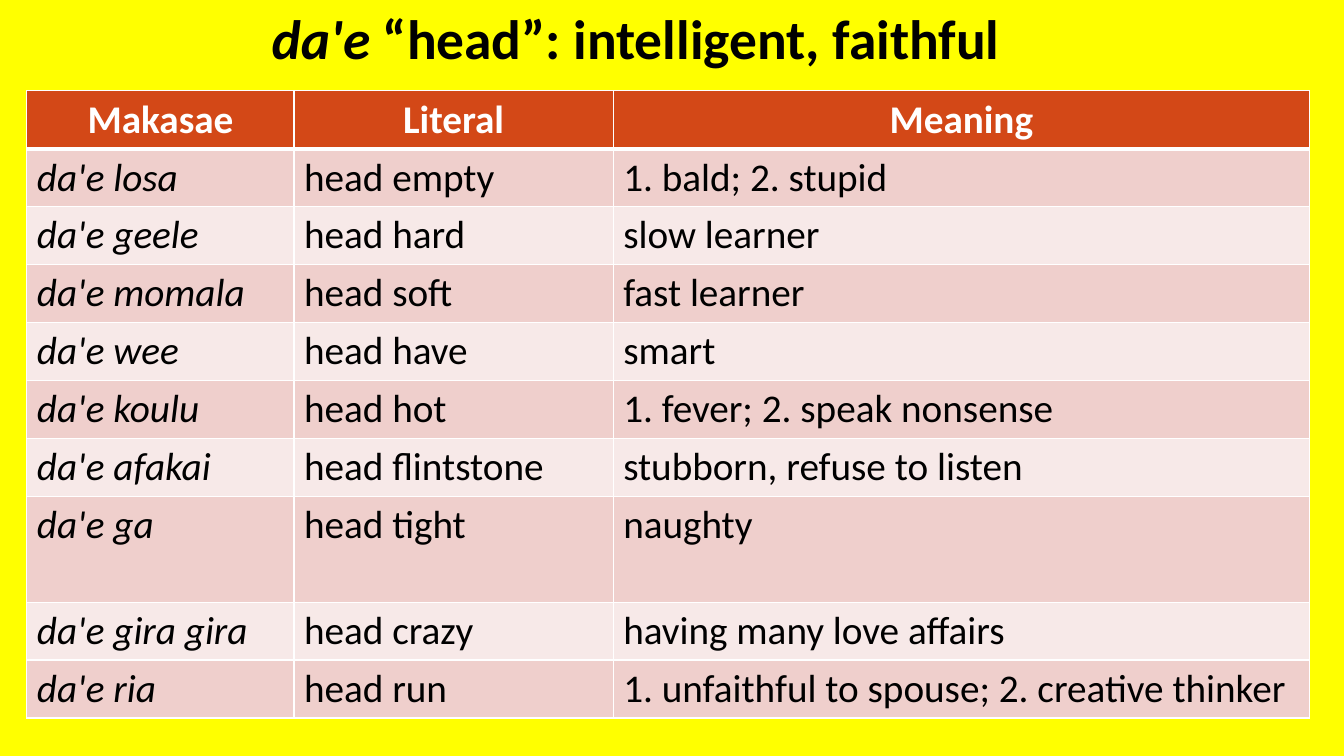
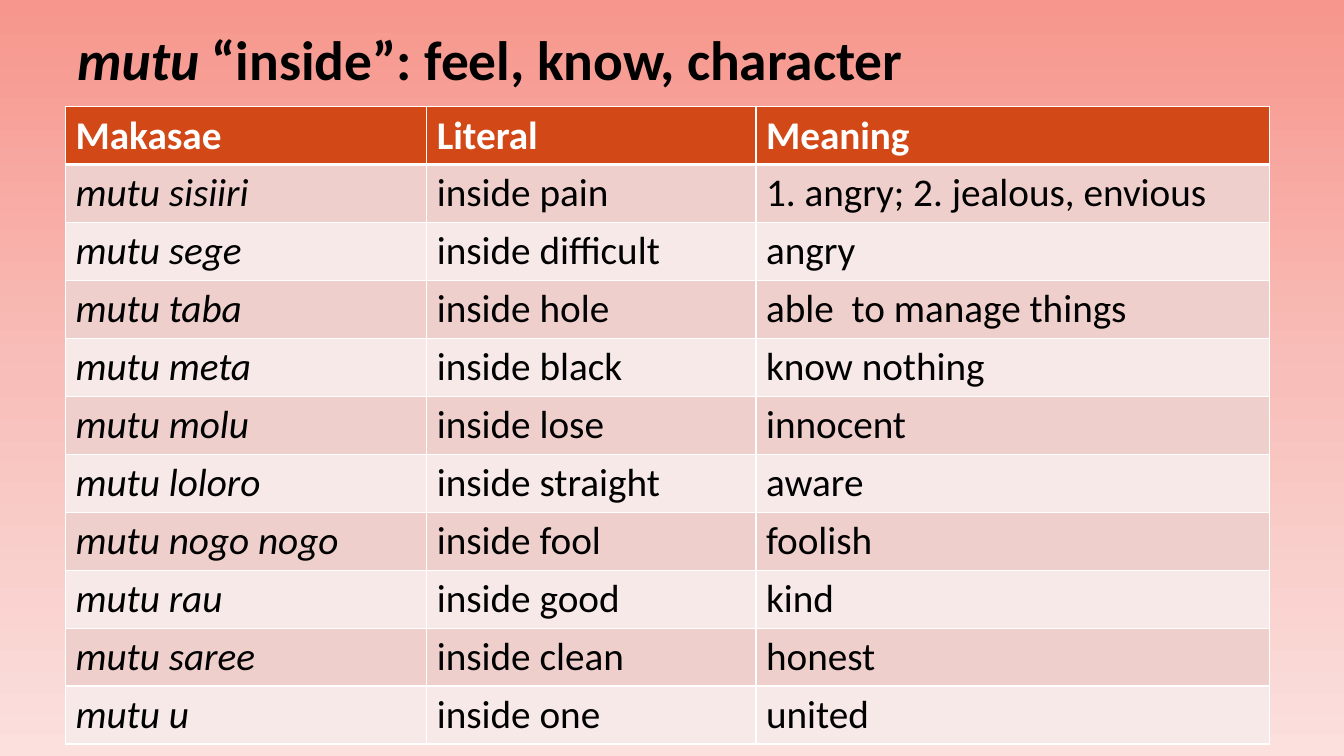
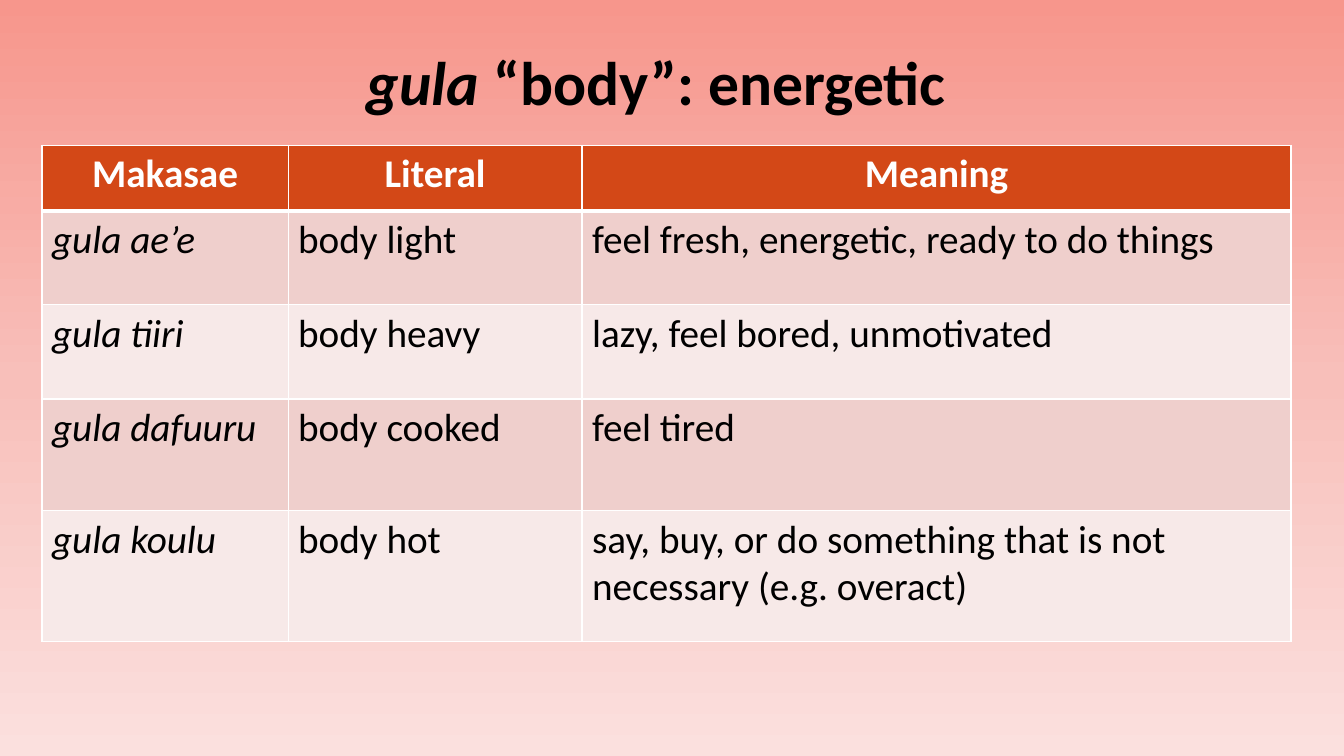
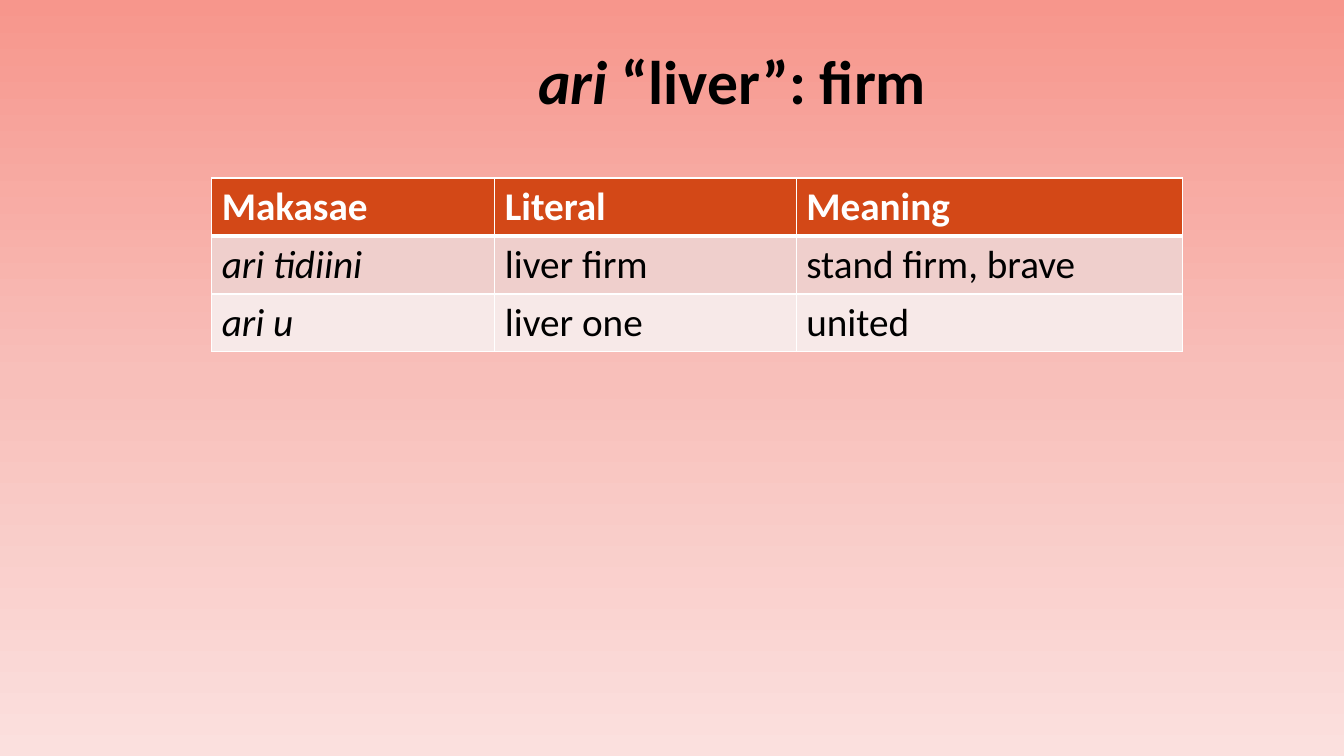
from copy import deepcopy
from lxml import etree
from pptx import Presentation
from pptx import util as u
from pptx.dml.color import RGBColor
from pptx.enum import text
from pptx.oxml.ns import qn

BLACK = RGBColor(0x00, 0x00, 0x00)
WHITE = RGBColor(0xFF, 0xFF, 0xFF)
YELLOW = RGBColor(0xFF, 0xFF, 0x00)
RUST = RGBColor(0xD3, 0x48, 0x17)
BANDS = (RGBColor(0xEF, 0xCF, 0xCC), RGBColor(0xF7, 0xE9, 0xE8))
BLUSH = (RGBColor(0xF7, 0x96, 0x8C), RGBColor(0xF8, 0xBF, 0xBA),
         RGBColor(0xFB, 0xE0, 0xDE))
FONT = "Calibri"
HEADS = ("Makasae", "Literal", "Meaning")
COLS, ROWS = 16, 9
ROW = 0.69
LEFT, MID = text.PP_ALIGN.LEFT, text.PP_ALIGN.CENTER


class Deck:
    def __init__(self):
        self.prs = Presentation()
        self.prs.slide_width = u.Inches(13.33)
        self.prs.slide_height = u.Inches(7.5)
        self.slide = None

    def x(self, cols):
        return round(self.prs.slide_width * cols / COLS)

    def y(self, rows):
        return round(self.prs.slide_height * rows / ROWS)

    def page(self, *tints):
        self.slide = self.prs.slides.add_slide(self.prs.slide_layouts[6])
        fill = self.slide.background.fill
        if len(tints) == 1:
            fill.solid()
            fill.fore_color.rgb = tints[0]
            return
        fill.gradient()
        fill.gradient_angle = 270
        stops = self.slide.element.find(".//" + qn("a:gsLst"))
        while len(stops) < len(tints):
            stops.append(deepcopy(stops[0]))
        for i, (stop, tint) in enumerate(zip(fill.gradient_stops, tints)):
            stop.position = i / (len(tints) - 1)
            stop.color.rgb = tint

    def style(self, para, size, color, bold, align):
        para.alignment = align
        font = para.font
        font.name, font.size, font.bold = FONT, u.Pt(size), bold
        font.color.rgb = color

    def title(self, box, word, rest, size=44, align=MID):
        left, top, width, height = box
        shape = self.slide.shapes.add_textbox(
            self.x(left), self.y(top), self.x(width), self.y(height))
        frame = shape.text_frame
        frame.word_wrap = True
        frame.vertical_anchor = text.MSO_ANCHOR.MIDDLE
        para = frame.paragraphs[0]
        self.style(para, size, BLACK, True, align)
        run = para.add_run()
        run.text = word
        run.font.italic = True
        para.add_run().text = rest

    def edge(self, cell, side, width):
        props = cell._tc.get_or_add_tcPr()
        line = etree.SubElement(props, qn("a:ln" + side), w=str(u.Pt(width)))
        fill = etree.SubElement(line, qn("a:solidFill"))
        etree.SubElement(fill, qn("a:srgbClr"), val=str(WHITE))

    def cell(self, cell, words, row, col, align):
        head = row == 0
        for side in "LRTB":
            thick = (row, side) in ((0, "B"), (1, "T"))
            self.edge(cell, side, 3 if thick else 1)
        cell.fill.solid()
        cell.fill.fore_color.rgb = RUST if head else BANDS[(row - 1) % 2]
        cell.text = words
        para = cell.text_frame.paragraphs[0]
        self.style(para, 28, WHITE if head else BLACK, head,
                   align if head else LEFT)
        para.font.italic = not head and col == 0

    def table(self, left, top, widths, body, heights=None, align=LEFT):
        lines = [HEADS, *body]
        heights = heights or [ROW] * len(lines)
        grid = self.slide.shapes.add_table(
            len(lines), len(widths), self.x(left), self.y(top),
            self.x(sum(widths)), self.y(sum(heights))).table
        grid.horz_banding = False
        for col, width in zip(grid.columns, widths):
            col.width = self.x(width)
        for r, (line, height) in enumerate(zip(lines, heights)):
            grid.rows[r].height = self.y(height)
            for c, words in enumerate(line):
                self.cell(grid.cell(r, c), words, r, c, align)


def main():
    deck = Deck()

    deck.page(YELLOW)
    deck.title((1.55, 0, 12.19, 0.89), "da'e ",
               "“head”: intelligent, faithful ", 39.6)
    deck.table(0.32, 1.08, (3.18, 3.8, 8.29), [
        ("da'e losa", "head empty", "1. bald; 2. stupid"),
        ("da'e geele", "head hard", "slow learner"),
        ("da'e momala", "head soft", "fast learner"),
        ("da'e wee", "head have", "smart"),
        ("da'e koulu", "head hot", "1. fever; 2. speak nonsense"),
        ("da'e afakai", "head flintstone", "stubborn, refuse to listen"),
        ("da'e ga", "head tight", "naughty"),
        ("da'e gira gira", "head crazy", "having many love affairs"),
        ("da'e ria", "head run",
         "1. unfaithful to spouse; 2. creative thinker"),
    ], [ROW] * 7 + [1.26] + [ROW] * 2, MID)

    deck.page(*BLUSH)
    deck.title((0.8, 0.04, 14.33, 1.3), "mutu",
               " “inside”: feel, know, character", 39.6, LEFT)
    deck.table(0.78, 1.27, (4.3, 3.92, 6.11), [
        ("mutu sisiiri", "inside pain", "1. angry; 2. jealous, envious"),
        ("mutu sege", "inside difficult", "angry"),
        ("mutu taba", "inside hole", "able  to manage things"),
        ("mutu meta", "inside black", "know nothing"),
        ("mutu molu", "inside lose", "innocent"),
        ("mutu loloro", "inside straight", "aware"),
        ("mutu nogo nogo", "inside fool", "foolish"),
        ("mutu rau", "inside good", "kind"),
        ("mutu saree", "inside clean", "honest"),
        ("mutu u", "inside one", "united"),
    ])

    deck.page(*BLUSH)
    deck.title((1.72, 0.17, 12.19, 1.58), "gula", " “body”: energetic")
    deck.table(0.5, 1.73, (2.93, 3.5, 8.44), [
        ("gula ae’e", "body light",
         "feel fresh, energetic, ready to do things"),
        ("gula tiiri", "body heavy", "lazy, feel bored, unmotivated"),
        ("gula dafuuru", "body cooked", "feel tired"),
        ("gula koulu", "body hot",
         "say, buy, or do something that is not necessary (e.g. overact)"),
    ], (0.78, 1.12, 1.12, 1.33, 1.56), MID)

    deck.page(*BLUSH)
    deck.title((3.46, 0.28, 10.52, 1.33), "ari", " “liver”: firm")
    deck.table(2.52, 2.12, (3.37, 3.59, 4.6), [
        ("ari tidiini", "liver firm", "stand firm, brave"),
        ("ari u", "liver one", "united"),
    ])

    deck.prs.save("out.pptx")


if __name__ == "__main__":
    main()
